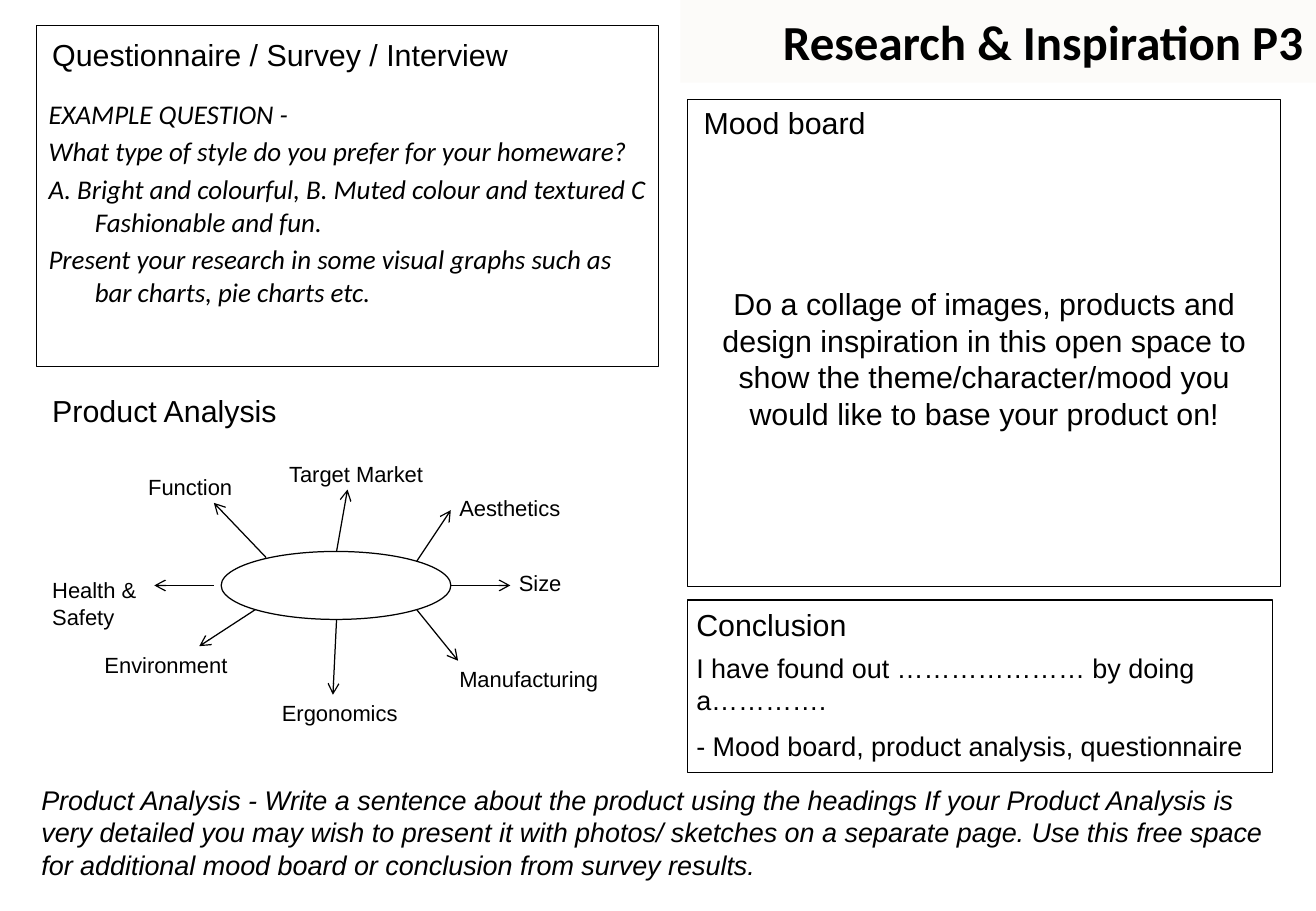
from lxml import etree
from pptx import Presentation, util as u
from pptx.dml.color import RGBColor
from pptx.enum import shapes, text
from pptx.oxml import ns

PX = 9144  # 100 px to the inch
BLACK = "000000"
BODY = [
    "EXAMPLE QUESTION -",
    "What type of style do you prefer for your homeware?",
    "A. Bright and colourful, B. Muted colour and textured C Fashionable and fun.",
    "Present your research in some visual graphs such as bar charts, pie charts etc.",
]
MOOD = ("Do a collage of images, products and design inspiration in this open space "
        "to show the theme/character/mood you would like to base your product on!")
FOUND = [
    "I have found out ………………… by doing a………….",
    "- Mood board, product analysis, questionnaire",
]
NOTE = ("Product Analysis - Write a sentence about the product using the headings "
        "If your Product Analysis is very detailed you may wish to present it with "
        "photos/ sketches on a separate page. Use this free space for additional "
        "mood board or conclusion from survey results.")
HEADS = [
    ("Questionnaire / Survey / Interview", (36, 26, 488, 33)),
    ("Product Analysis", (36, 319, 201, 33)),
    ("Mood board", (572, 82, 488, 33)),
    ("Conclusion", (566, 495, 469, 33)),
]
# Label, its box, then the start and end of its arrow
TOPICS = [
    ("Aesthetics", (371, 403, 110, 29), (343, 462), (371, 420)),
    ("Size", (420, 465, 110, 29), (371, 482), (420, 482)),
    ("Manufacturing", (371, 544, 146, 29), (343, 502), (377, 544)),
    ("Ergonomics", (225, 572, 128, 29), (277, 510), (274, 572)),
    ("Environment", (79, 532, 134, 29), (210, 502), (164, 532)),
    ("Health & Safety", (36, 471, 110, 51), (176, 482), (127, 482)),
    ("Target Market", (231, 375, 140, 29), (277, 454), (286, 403)),
    ("Function", (115, 386, 110, 29), (219, 459), (176, 414)),
]


def px(*nums):
    return [u.Emu(n * PX) for n in nums]


def tint(hue):
    return RGBColor.from_string(hue)


def edge(shape):
    shape.line.color.rgb = tint(BLACK)
    shape.line.width = u.Pt(0.75)


def place(shape, box):
    shape.left, shape.top, shape.width, shape.height = px(*box)


def write(shape, lines, size=18, font="Arial", bold=False, italic=False,
          align="LEFT", anchor="TOP", gap=0, hang=0, inset=(7, 4, 7, 4)):
    """Fill the shape with one paragraph for each line."""
    frame = shape.text_frame
    frame.word_wrap = True
    frame.auto_size = text.MSO_AUTO_SIZE.NONE
    frame.vertical_anchor = getattr(text.MSO_ANCHOR, anchor)
    (frame.margin_left, frame.margin_top,
     frame.margin_right, frame.margin_bottom) = px(*inset)
    for i, line in enumerate(lines):
        para = frame.add_paragraph() if i else frame.paragraphs[0]
        para.alignment = getattr(text.PP_ALIGN, align)
        para.space_before = u.Pt(gap)
        props = para._p.get_or_add_pPr()
        props.set("marL", str(hang * PX))
        props.set("indent", str(-hang * PX))
        etree.SubElement(props, ns.qn("a:buNone"))
        run = para.add_run()
        run.text = line
        face = run.font
        face.name, face.size = font, u.Pt(size)
        face.bold, face.italic = bold, italic
        face.color.rgb = tint(BLACK)


def label(slide, line, box, **form):
    write(slide.shapes.add_textbox(*px(*box)), [line], **form)


def panel(slide, box, kind="RECTANGLE"):
    shape = slide.shapes.add_shape(getattr(shapes.MSO_SHAPE, kind), *px(*box))
    shape.shadow.inherit = False
    shape.fill.background()
    edge(shape)
    return shape


def arrow(slide, start, end):
    link = slide.shapes.add_connector(
        shapes.MSO_CONNECTOR.STRAIGHT, *px(*start, *end))
    edge(link)
    etree.SubElement(link.line._get_or_add_ln(), ns.qn("a:tailEnd"), type="arrow")
    etree.SubElement(link._element.spPr, ns.qn("a:effectLst"))


def main():
    deck = Presentation()
    deck.slide_width, deck.slide_height = px(1083, 750)
    slide = deck.slides.add_slide(deck.slide_layouts[1])

    title, body = slide.placeholders
    place(title, (560, 0, 523, 68))
    title.fill.solid()
    title.fill.fore_color.rgb = tint("FCFBF9")
    write(title, ["Research & Inspiration P3"], size=29, font="Calibri",
          bold=True, align="RIGHT", anchor="MIDDLE", inset=(10, 5, 10, 5))

    place(body, (30, 21, 512, 281))
    edge(body)
    write(body, BODY, size=16, font="Calibri", italic=True, gap=3.2,
          hang=38, inset=(10, 59, 10, 5))

    mood = panel(slide, (566, 82, 488, 401))
    write(mood, [MOOD], align="CENTER", inset=(7, 153, 7, 4))
    found = panel(slide, (566, 494, 481, 142))
    write(found, FOUND, size=16, gap=8, inset=(7, 42, 7, 4))
    for line, box in HEADS:
        label(slide, line, box)

    panel(slide, (182, 454, 189, 56), "OVAL")
    for line, box, start, end in TOPICS:
        arrow(slide, start, end)
        label(slide, line, box, size=13)
    label(slide, NOTE, (27, 641, 1021, 88), size=16, italic=True)
    deck.save("out.pptx")


if __name__ == "__main__":
    main()
